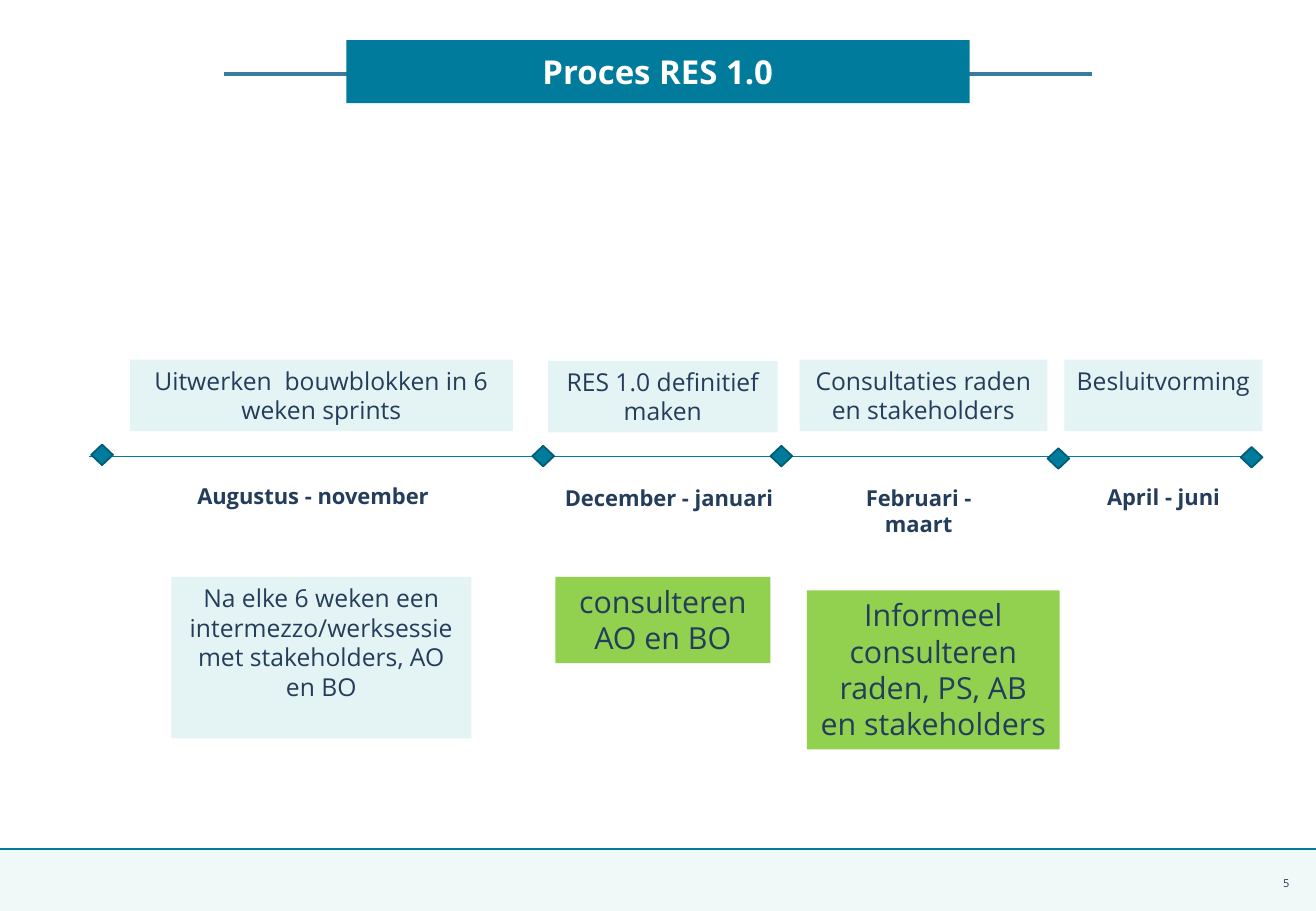
from pptx import Presentation
from pptx import util as u
from pptx.dml.color import RGBColor
from pptx.enum import shapes, text
from pptx.oxml.ns import qn
from lxml import etree

TEAL = RGBColor(0x00, 0x7B, 0x9B)
TEAL_DARK = RGBColor(0x00, 0x5B, 0x73)
TITLE_LINE = RGBColor(0x38, 0x7B, 0x9A)
PALE = RGBColor(0xE4, 0xF3, 0xF3)
GREEN = RGBColor(0x92, 0xD0, 0x50)
NAVY = RGBColor(0x23, 0x3D, 0x5A)
NUMBER = RGBColor(0x1D, 0x34, 0x4D)
WHITE = RGBColor(0xFF, 0xFF, 0xFF)

CENTER, RIGHT = text.PP_ALIGN.CENTER, text.PP_ALIGN.RIGHT
TOP, MIDDLE = text.MSO_ANCHOR.TOP, text.MSO_ANCHOR.MIDDLE
RECTANGLE, DIAMOND = shapes.MSO_SHAPE.RECTANGLE, shapes.MSO_SHAPE.DIAMOND


class ProcessSlide:
    font_name = "Open Sans"

    def __init__(self, presentation):
        self.slide = presentation.slides.add_slide(presentation.slide_layouts[5])
        self.shapes = self.slide.shapes

    def add_words(self, shape, words, size, color=NAVY, bold=False, align=CENTER,
                  anchor=TOP, insets=(0.1, 0.05, 0.1, 0.05)):
        frame = shape.text_frame
        frame.word_wrap = True
        frame.vertical_anchor = anchor
        (frame.margin_left, frame.margin_top,
         frame.margin_right, frame.margin_bottom) = map(u.Inches, insets)
        paragraph = frame.paragraphs[0]
        paragraph.alignment = align
        run = paragraph.add_run()
        run.text = words
        run.font.name = self.font_name
        run.font.size = u.Pt(size)
        run.font.bold = bold
        run.font.color.rgb = color
        return paragraph

    def title(self, place, words):
        shape = self.shapes.title
        shape.left, shape.top, shape.width, shape.height = map(u.Inches, place)
        shape.fill.solid()
        shape.fill.fore_color.rgb = TEAL
        paragraph = self.add_words(shape, words, 19.5, WHITE, True, anchor=MIDDLE,
                                   insets=(0, 0.03, 0, 0))
        paragraph.line_spacing = 0.9
        # Bring the title in front of the line behind it
        self.shapes.element.append(shape.element)

    def line(self, start, end, color, width, arrow=False):
        connector = self.shapes.add_connector(
            shapes.MSO_CONNECTOR.STRAIGHT, *map(u.Inches, start + end))
        connector.line.color.rgb = color
        connector.line.width = u.Pt(width)
        properties = connector.element.spPr
        if arrow:
            outline = properties.find(qn("a:ln"))
            etree.SubElement(outline, qn("a:tailEnd"), type="triangle")
        etree.SubElement(properties, qn("a:effectLst"))

    def shape(self, kind, place, fill, outline=None):
        shape = self.shapes.add_shape(kind, *map(u.Inches, place))
        shape.shadow.inherit = False
        shape.fill.solid()
        shape.fill.fore_color.rgb = fill
        if outline is None:
            shape.line.fill.background()
        else:
            shape.line.color.rgb = outline
            shape.line.width = u.Pt(1)
        return shape

    def box(self, place, words, fill, size):
        self.add_words(self.shape(RECTANGLE, place, fill), words, size)

    def label(self, place, words, size, **style):
        textbox = self.shapes.add_textbox(*map(u.Inches, place))
        self.add_words(textbox, words, size, **style)


def main():
    presentation = Presentation()
    presentation.slide_width = u.Inches(10.83)
    presentation.slide_height = u.Inches(7.5)
    page = ProcessSlide(presentation)

    # Footer band, half transparent
    band = page.shape(RECTANGLE, (0, 6.99, 10.83, 0.51), PALE)
    color = band.element.spPr.find(qn("a:solidFill")).find(qn("a:srgbClr"))
    etree.SubElement(color, qn("a:alpha"), val="50000")
    page.line((0, 6.99), (10.83, 6.99), TEAL, 1)
    page.label((10.22, 7.07, 0.39, 0.4), "5", 6.5, color=NUMBER, align=RIGHT,
               anchor=MIDDLE, insets=(0, 0, 0, 0))

    # Title
    page.line((1.84, 0.61), (8.99, 0.61), TITLE_LINE, 2.25)
    page.title((2.85, 0.33, 5.13, 0.52), "Proces RES 1.0")

    # Timeline with milestones
    page.line((0.73, 3.76), (10.39, 3.76), TEAL, 0.5, arrow=True)
    milestones = [(0.75, 3.66), (4.38, 3.67), (6.34, 3.67), (8.62, 3.69), (10.21, 3.68)]
    for left, top in milestones:
        page.shape(DIAMOND, (left, top, 0.18, 0.17), TEAL, TEAL_DARK)

    # Phases above the timeline
    phases = [
        (1.07, 2.96, 3.15, "Uitwerken  bouwblokken in 6 weken sprints"),
        (4.51, 2.97, 1.89, "RES 1.0 definitief maken"),
        (6.58, 2.96, 2.04, "Consultaties raden en stakeholders"),
        (8.76, 2.96, 1.63, "Besluitvorming"),
    ]
    for left, top, width, words in phases:
        page.box((left, top, width, 0.59), words, PALE, 14.6)

    # Periods below the timeline
    periods = [
        (1.42, 3.92, 2.31, "Augustus - november"),
        (4.54, 3.94, 1.93, "December - januari "),
        (6.73, 3.94, 1.66, "Februari - maart"),
        (9.01, 3.93, 1.13, "April - juni"),
    ]
    for left, top, width, words in periods:
        page.label((left, top, width, 0.32), words, 13, bold=True)

    # Consultation per phase
    page.box((1.41, 4.75, 2.47, 1.33),
             "Na elke 6 weken een intermezzo/werksessie met stakeholders, AO en BO",
             PALE, 14.6)
    page.box((4.57, 4.75, 1.77, 0.71), "consulteren AO en BO", GREEN, 18)
    page.box((6.64, 4.86, 2.08, 1.31),
             "Informeel consulteren raden, PS, AB en stakeholders", GREEN, 18)

    presentation.save("out.pptx")


if __name__ == "__main__":
    main()
